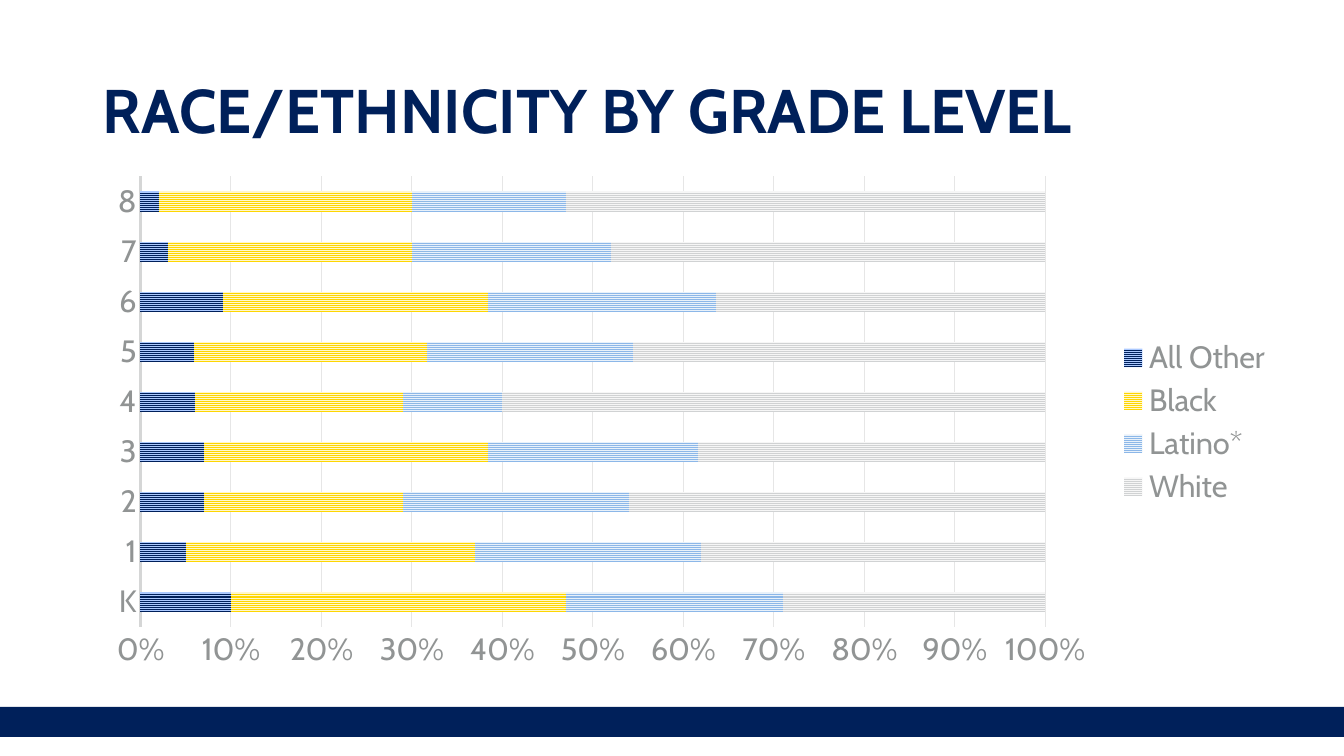
from lxml import etree
from pptx import Presentation
from pptx import util as u
from pptx.chart import data
from pptx.dml.color import RGBColor
from pptx.enum import chart as charts, dml, shapes, text

NAVY = RGBColor(0x00, 0x20, 0x5A)
WHITE = RGBColor(0xFF, 0xFF, 0xFF)
LABEL_GREY = RGBColor(0x91, 0x94, 0x94)
AXIS_GREY = RGBColor(0xD5, 0xD6, 0xD6)
GRID_GREY = RGBColor(0xE6, 0xE6, 0xE6)

GRADES = ["K", "1", "2", "3", "4", "5", "6", "7", "8"]
# Group name, percentages by grade, stripe colour, background colour
GROUPS = [
    ("All Other", [10, 5, 7, 7, 6, 6, 9, 3, 2],
     NAVY, RGBColor(0xAB, 0xC9, 0xFF)),
    ("Black", [37, 32, 22, 31, 23, 26, 29, 27, 28],
     RGBColor(0xFE, 0xD6, 0x01), RGBColor(0xFF, 0xF7, 0xCC)),
    ("Latino*", [24, 25, 25, 23, 11, 23, 25, 22, 17],
     RGBColor(0x8C, 0xB7, 0xE8), RGBColor(0xE8, 0xF1, 0xFA)),
    ("White", [29, 38, 46, 38, 60, 46, 36, 48, 53],
     RGBColor(0xD0, 0xD2, 0xD3), RGBColor(0xF6, 0xF6, 0xF6)),
]


class SlideBuilder:
    font_name = "Cabin"
    title_size = u.Pt(44)
    label_size = u.Pt(22)

    def __init__(self, presentation):
        self.slide = presentation.slides.add_slide(presentation.slide_layouts[5])
        self.slide.background.fill.solid()
        self.slide.background.fill.fore_color.rgb = WHITE

    def style_font(self, font, size, color, bold=False):
        font.name = self.font_name
        font.size = size
        font.bold = bold
        font.color.rgb = color

    def band(self, left, top, width, height, color):
        shape = self.slide.shapes.add_shape(
            shapes.MSO_SHAPE.RECTANGLE, left, top, width, height)
        shape.shadow.inherit = False
        shape.fill.solid()
        shape.fill.fore_color.rgb = color
        shape.line.fill.background()

    def title(self, wording, left, top, width, height):
        shape = self.slide.shapes.title
        shape.left, shape.top, shape.width, shape.height = left, top, width, height
        frame = shape.text_frame
        frame.word_wrap = True
        frame.auto_size = text.MSO_AUTO_SIZE.NONE
        frame.vertical_anchor = text.MSO_ANCHOR.MIDDLE
        paragraph = frame.paragraphs[0]
        paragraph.alignment = text.PP_ALIGN.LEFT
        paragraph.line_spacing = 0.9
        run = paragraph.add_run()
        run.text = wording
        self.style_font(run.font, self.title_size, NAVY, bold=True)

    def stacked_bars(self, categories, groups, left, top, width, height):
        chart_data = data.CategoryChartData(number_format="0")
        chart_data.categories = categories
        for name, values, *_ in groups:
            chart_data.add_series(name, values)
        chart = self.slide.shapes.add_chart(
            charts.XL_CHART_TYPE.BAR_STACKED_100,
            left, top, width, height, chart_data).chart
        chart.has_title = False
        self.style_font(chart.font, self.label_size, LABEL_GREY)

        # Striped bars
        plot = chart.plots[0]
        plot.gap_width = 150
        plot.overlap = 100
        plot.vary_by_categories = False
        for series, (_, _, stripe, background) in zip(plot.series, groups):
            series.invert_if_negative = False
            fill = series.format.fill
            fill.patterned()
            fill.pattern = dml.MSO_PATTERN.NARROW_HORIZONTAL
            fill.fore_color.rgb = stripe
            fill.back_color.rgb = background

        # Axes
        for axis in (chart.category_axis, chart.value_axis):
            axis.major_tick_mark = charts.XL_TICK_MARK.NONE
            axis.minor_tick_mark = charts.XL_TICK_MARK.NONE
            self.style_font(axis.tick_labels.font, self.label_size, LABEL_GREY)
        chart.category_axis.format.line.color.rgb = AXIS_GREY
        chart.category_axis.format.line.width = u.Pt(1.5)
        axis = chart.value_axis
        axis.minimum_scale, axis.maximum_scale, axis.major_unit = 0, 1, 0.1
        axis.format.line.fill.background()
        axis.has_major_gridlines = True
        axis.major_gridlines.format.line.color.rgb = GRID_GREY
        axis.major_gridlines.format.line.width = u.Pt(0.75)
        axis.tick_labels.number_format = "0%"
        axis.tick_labels.number_format_is_linked = False

        # Legend
        chart.has_legend = True
        chart.legend.position = charts.XL_LEGEND_POSITION.RIGHT
        chart.legend.include_in_layout = False
        self.style_font(chart.legend.font, self.label_size, LABEL_GREY)
        self.place_plot(chart, x=0.04, y=0.02, w=0.76, h=0.88)

    def place_plot(self, chart, **fractions):
        plot_area = chart.plots[0]._element.getparent()
        namespace = etree.QName(plot_area).namespace
        for old in plot_area.findall(f"{{{namespace}}}layout"):
            plot_area.remove(old)
        layout = etree.Element(f"{{{namespace}}}layout")
        manual = etree.SubElement(layout, f"{{{namespace}}}manualLayout")
        settings = {"layoutTarget": "inner", "xMode": "edge", "yMode": "edge"}
        for tag, value in (settings | fractions).items():
            etree.SubElement(manual, f"{{{namespace}}}{tag}", val=str(value))
        plot_area.insert(0, layout)


def main():
    presentation = Presentation()
    presentation.slide_width = u.Cm(33.87)
    presentation.slide_height = u.Cm(19.05)
    builder = SlideBuilder(presentation)

    # Footer band
    builder.band(0, u.Cm(17.81), presentation.slide_width, u.Cm(0.76), NAVY)

    # Title and chart
    margin = u.Cm(2.34)
    builder.title("RACE/ETHNICITY BY GRADE LEVEL",
                  margin, u.Cm(1.02), u.Cm(29.21), u.Cm(3.68))
    builder.stacked_bars(GRADES, GROUPS,
                         margin, u.Cm(4.19), u.Cm(30), u.Cm(12.9))
    presentation.save("out.pptx")


if __name__ == "__main__":
    main()
